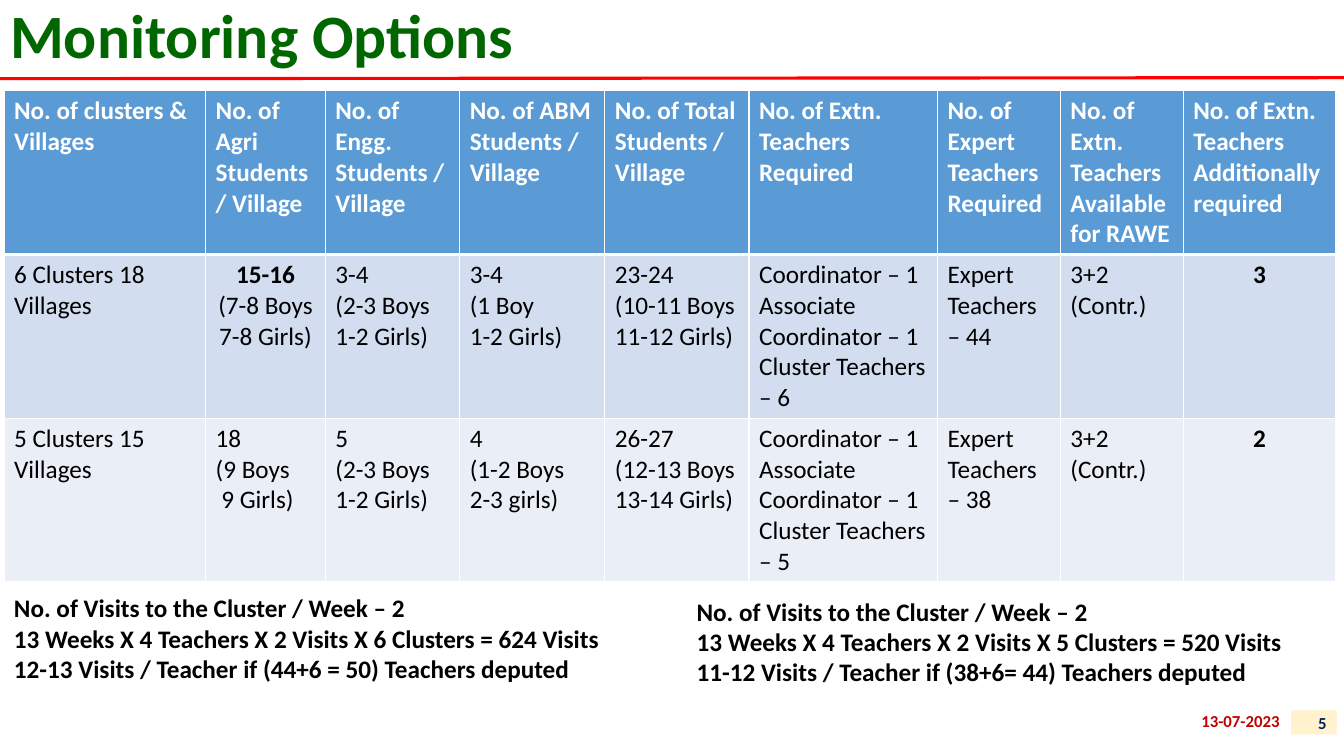
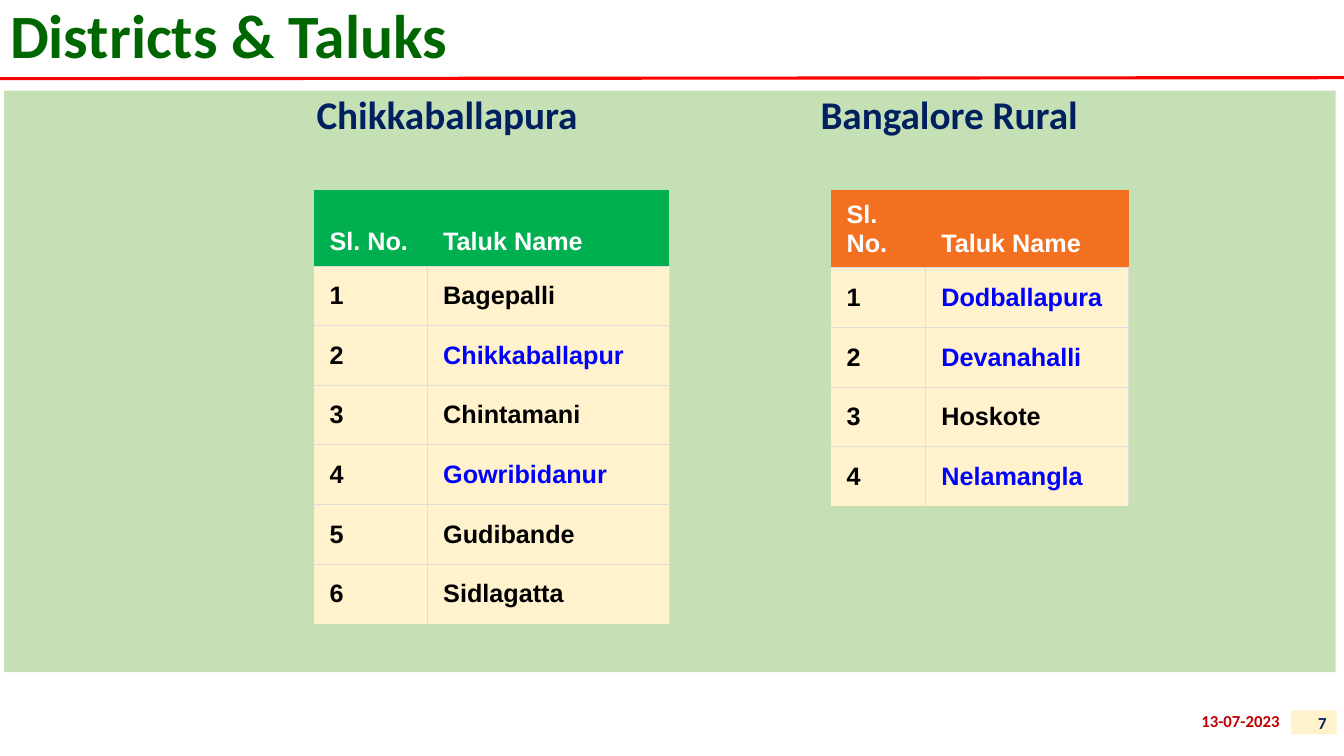
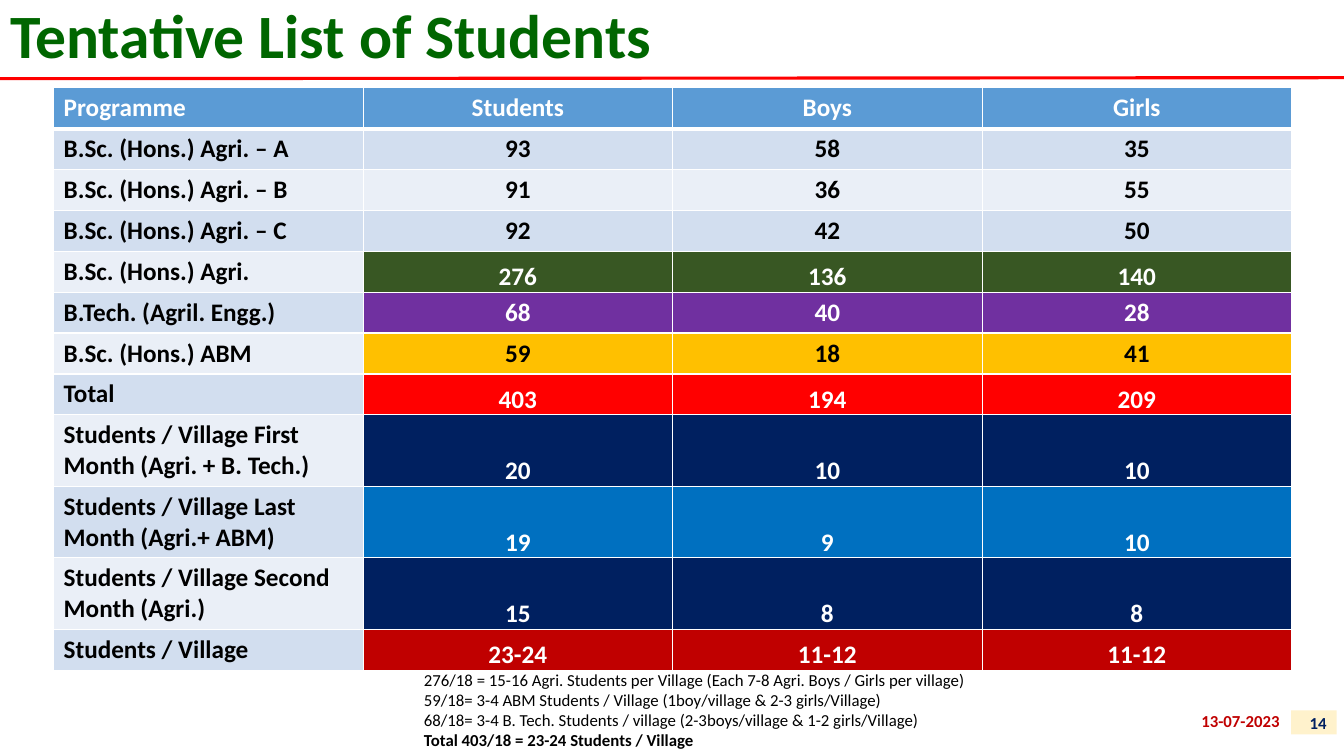
from dataclasses import dataclass, replace
from typing import NamedTuple, Optional, Sequence

from lxml import etree
from pptx import Presentation
from pptx import oxml
from pptx import util as u
from pptx.dml import color
from pptx.enum import shapes, text
from pptx.oxml import ns

Pt = u.Pt
NO_GRID_STYLE = "{2D5ABB26-0587-4C30-8999-92F81FD0307C}"
TAB_STEP = str(Pt(72))
WHITE, BLACK, NAVY, CREAM = "FFFFFF", "000000", "002060", "FFF2CC"
HEADING, BANDS = "5B9BD5", ("D2DEEF", "EAEFF7")
LEFT, CENTER, RIGHT = text.PP_ALIGN.LEFT, text.PP_ALIGN.CENTER, text.PP_ALIGN.RIGHT
TOP, MIDDLE, BOTTOM = (
    text.MSO_ANCHOR.TOP, text.MSO_ANCHOR.MIDDLE, text.MSO_ANCHOR.BOTTOM)


class Box(NamedTuple):
    left: float
    top: float
    width: float
    height: float


class Margins(NamedTuple):
    left: float = 7.2
    top: float = 3.6
    right: float = 7.2
    bottom: float = 3.6


@dataclass(frozen=True)
class Ink:
    size: float = 18
    color: str = BLACK
    bold: bool = True
    font: str = "Calibri"
    align: text.PP_ALIGN = LEFT


class Line(NamedTuple):
    words: str
    ink: Ink


@dataclass(frozen=True)
class Cell:
    lines: Sequence[Line]
    fill: str
    anchor: text.MSO_ANCHOR = TOP
    margins: Margins = Margins()


class Border(NamedTuple):
    side: str
    width: float
    color: str


class Programme(NamedTuple):
    name: str
    counts: tuple[str, str, str]
    fill: Optional[str] = None
    color: str = BLACK
    low: bool = False


class District(NamedTuple):
    left: float
    columns: tuple[float, float]
    header_height: float
    header_fill: str
    taluks: Sequence[str]
    chosen: Sequence[str]


TITLE_INK = Ink(44, "006600")
BOLD = Ink()
PLAIN = Ink(bold=False)
HEADING_INK = Ink(color=WHITE)
DATE_INK = Ink(12, "C00000")
NUMBER_INK = Ink(12, NAVY, align=RIGHT)
DISTRICT_INK = Ink(28, NAVY)
TALUK_INK = Ink(font="Arial")
NOTE_INK = Ink(12, bold=False)
HEADER_MARGINS = Margins(11.25, 4.7, 11.25, 7.5)
TALUK_MARGINS = Margins(11.25, 11.25, 11.25, 9.6)
TIGHT_MARGINS = Margins(0.72, 0.72, 0.72, 0)

CLUSTER_COLUMNS = (144, 85.5, 96, 103.7, 103, 134.6, 87.8, 87.8, 109)
CLUSTER_HEADINGS = (
    "No. of clusters & Villages", "No. of Agri Students / Village",
    "No. of Engg. Students / Village", "No. of ABM Students / Village",
    "No. of Total Students / Village", "No. of Extn. Teachers Required",
    "No. of Expert Teachers Required", "No. of Extn. Teachers Available for RAWE",
    "No. of Extn. Teachers Additionally required")
CLUSTER_OPTIONS = (
    ("6 Clusters 18 Villages", "15-16\n(7-8 Boys\n7-8 Girls)",
     "3-4\n(2-3 Boys\n1-2 Girls)", "3-4\n(1 Boy\n1-2 Girls)",
     "23-24\n(10-11 Boys\n11-12 Girls)",
     "Coordinator – 1\nAssociate Coordinator – 1\nCluster Teachers – 6",
     "Expert Teachers – 44", "3+2 (Contr.)", "3"),
    ("5 Clusters 15 Villages", "18\n(9 Boys\n 9 Girls)",
     "5\n(2-3 Boys\n1-2 Girls)", "4\n(1-2 Boys\n2-3 girls)",
     "26-27\n(12-13 Boys\n13-14 Girls)",
     "Coordinator – 1\nAssociate Coordinator – 1\nCluster Teachers – 5",
     "Expert Teachers – 38", "3+2 (Contr.)", "2"),
)
VISITS = (
    (Box(2.9, 419.8, 464, 72.7),
     "No. of Visits to the Cluster / Week – 2\n"
     "13 Weeks X 4 Teachers X 2 Visits X 6 Clusters = 624 Visits\n"
     "12-13 Visits / Teacher if (44+6 = 50) Teachers deputed"),
    (Box(490.5, 422.2, 464, 72.7),
     "No. of Visits to the Cluster / Week – 2\n"
     "13 Weeks X 4 Teachers X 2 Visits X 5 Clusters = 520 Visits\n"
     "11-12 Visits / Teacher if (38+6= 44) Teachers deputed"),
)
DISTRICTS = (
    District(593.5, (67.7, 145), 55.2, "F37020",
             ("Dodballapura", "Devanahalli", "Hoskote", "Nelamangla"),
             ("Dodballapura", "Devanahalli", "Nelamangla")),
    District(224.2, (81.2, 172.8), 54, "00B050",
             ("Bagepalli", "Chikkaballapur", "Chintamani", "Gowribidanur",
              "Gudibande", "Sidlagatta"),
             ("Chikkaballapur", "Gowribidanur")),
)
PROGRAMMES = (
    Programme("B.Sc. (Hons.) Agri. – A", ("93", "58", "35")),
    Programme("B.Sc. (Hons.) Agri. – B", ("91", "36", "55")),
    Programme("B.Sc. (Hons.) Agri. – C", ("92", "42", "50")),
    Programme("B.Sc. (Hons.) Agri.", ("276", "136", "140"), "385723", WHITE, True),
    Programme("B.Tech. (Agril. Engg.)", ("68", "40", "28"), "7030A0", WHITE),
    Programme("B.Sc. (Hons.) ABM", ("59", "18", "41"), "FFC000"),
    Programme("Total", ("403", "194", "209"), "FF0000", WHITE, True),
    Programme("Students / Village First Month (Agri. + B. Tech.)",
              ("20", "10", "10"), NAVY, WHITE, True),
    Programme("Students / Village Last Month (Agri.+ ABM)",
              ("19", "9", "10"), "0070C0", WHITE, True),
    Programme("Students / Village Second Month (Agri.)",
              ("15", "8", "8"), NAVY, WHITE, True),
    Programme("Students / Village", ("23-24", "11-12", "11-12"),
              "C00000", WHITE, True),
)
VILLAGE_SHARES = (
    "276/18 = 15-16 Agri. Students per Village (Each 7-8 Agri. Boys / Girls per village)\n"
    "59/18= 3-4 ABM Students / Village (1boy/village & 2-3 girls/Village)\n"
    "68/18= 3-4 B. Tech. Students / village (2-3boys/village & 1-2 girls/Village)")


def paint(target, hex_color: str) -> None:
    if hasattr(target, "solid"):
        target.solid()
        target = target.fore_color
    target.rgb = color.RGBColor.from_string(hex_color)


def lines_of(words: str, ink: Ink) -> list[Line]:
    return [Line(part, ink) for part in words.split("\n")]


def write(frame, lines: Sequence[Line]) -> None:
    for index, (words, ink) in enumerate(lines):
        paragraph = frame.add_paragraph() if index else frame.paragraphs[0]
        paragraph.alignment = ink.align
        run = paragraph.add_run()
        run.text = words
        run.font.name = ink.font
        run.font.size = Pt(ink.size)
        run.font.bold = ink.bold
        paint(run.font.color, ink.color)


def place(shape, box: Box) -> None:
    shape.left, shape.top, shape.width, shape.height = map(Pt, box)


def add_words(slide, box: Box, lines: Sequence[Line], anchor=TOP, wrap=True) -> None:
    frame = slide.shapes.add_textbox(*map(Pt, box)).text_frame
    frame.word_wrap = wrap
    frame.vertical_anchor = anchor
    write(frame, lines)


def fill_placeholder(placeholder, box: Box, words: str, ink: Ink, anchor) -> None:
    place(placeholder, box)
    frame = placeholder.text_frame
    frame.auto_size = text.MSO_AUTO_SIZE.NONE
    frame.vertical_anchor = anchor
    write(frame, [Line(words, ink)])
    frame.paragraphs[0].line_spacing = 0.9
    frame.paragraphs[0].space_before = Pt(0)


def add_base(deck, layout: int, title: str, number: str):
    slide = deck.slides.add_slide(deck.slide_layouts[layout])
    rule = slide.shapes.add_connector(
        shapes.MSO_CONNECTOR.STRAIGHT, Pt(0), Pt(56.2), Pt(960), Pt(55.5))
    rule.line.width = Pt(2.25)
    paint(rule.line.fill, "FF0000")
    etree.SubElement(rule._element.spPr, ns.qn("a:effectLst"))
    fill_placeholder(slide.shapes.title, Box(0, 0, 960, 55.4), title, TITLE_INK, MIDDLE)
    add_words(slide, Box(851, 500.4, 71.3, 28.8), [Line("13-07-2023", DATE_INK)],
              MIDDLE, wrap=False)
    badge = slide.shapes.add_shape(
        shapes.MSO_SHAPE.RECTANGLE, *map(Pt, Box(922.3, 507.4, 32.4, 17.3)))
    badge.shadow.inherit = False
    badge.line.fill.background()
    paint(badge.fill, CREAM)
    badge.text_frame.vertical_anchor = MIDDLE
    write(badge.text_frame, [Line(number, NUMBER_INK)])
    return slide


def draw_borders(cell, borders: Sequence[Border]) -> None:
    properties = cell._tc.get_or_add_tcPr()
    for index, (side, width, hex_color) in enumerate(borders):
        properties.insert(index, oxml.parse_xml(
            f'<a:ln{side} {ns.nsdecls("a")} w="{Pt(width)}"><a:solidFill>'
            f'<a:srgbClr val="{hex_color}"/></a:solidFill></a:ln{side}>'))


def white_grid(row: int, column: int) -> list[Border]:
    heavy = {(0, "B"), (1, "T")}
    return [Border(side, 3 if (row, side) in heavy else 1, WHITE) for side in "LRTB"]


def grey_grid(row: int, column: int) -> list[Border]:
    sides = "B" if row == 0 else "LRT" if column else "RT"
    return [Border(side, 0.75, "DDDDDD") for side in sides]


def add_grid(slide, left: float, top: float, widths: Sequence[float],
             heights: Sequence[float], rows: Sequence[Sequence[Cell]], borders) -> None:
    box = Box(left, top, sum(widths), sum(heights))
    table = slide.shapes.add_table(len(rows), len(widths), *map(Pt, box)).table
    table.first_row = table.horz_banding = False
    table._tbl.tblPr.find(ns.qn("a:tableStyleId")).text = NO_GRID_STYLE
    for column, width in zip(table.columns, widths):
        column.width = Pt(width)
    for r, (height, row) in enumerate(zip(heights, rows)):
        table.rows[r].height = Pt(height)
        for c, content in enumerate(row):
            cell = table.cell(r, c)
            margins = map(Pt, content.margins)
            cell.margin_left, cell.margin_top, cell.margin_right, cell.margin_bottom = margins
            cell.vertical_anchor = content.anchor
            paint(cell.fill, content.fill)
            draw_borders(cell, borders(r, c))
            write(cell.text_frame, content.lines)


def cluster_lines(words: str, column: int) -> list[Line]:
    if column == len(CLUSTER_COLUMNS) - 1:
        return lines_of(words, replace(BOLD, align=CENTER))
    if words.startswith("15-16"):
        first, *others = lines_of(words, replace(PLAIN, align=CENTER))
        return [Line(first.words, replace(first.ink, bold=True)), *others]
    return lines_of(words, PLAIN)


def add_monitoring(deck) -> None:
    slide = add_base(deck, 5, "Monitoring Options", "5")
    rows = [[Cell([Line(words, HEADING_INK)], HEADING) for words in CLUSTER_HEADINGS]]
    for option, band in zip(CLUSTER_OPTIONS, BANDS):
        rows.append([Cell(cluster_lines(words, c), band) for c, words in enumerate(option)])
    add_grid(slide, 2.9, 64.8, CLUSTER_COLUMNS, [117] * len(rows), rows, white_grid)
    for box, words in VISITS:
        add_words(slide, box, lines_of(words, BOLD))


def add_districts(deck) -> None:
    slide = add_base(deck, 1, "Districts & Taluks", "7")
    panel = slide.placeholders[1]
    paint(panel.fill, "C5E0B4")
    properties = panel.text_frame.paragraphs[0]._p.get_or_add_pPr()
    for setting, length in (("marL", "0"), ("indent", "0"), ("defTabSz", TAB_STEP)):
        properties.set(setting, length)
    etree.SubElement(properties, ns.qn("a:buNone"))
    fill_placeholder(panel, Box(2.9, 64.8, 951.1, 415.4),
                     "\t\t\tChikkaballapura\t\t\tBangalore Rural", DISTRICT_INK, TOP)
    header_ink = replace(TALUK_INK, color=WHITE)
    for district in DISTRICTS:
        rows = [[Cell([Line(words, header_ink)], district.header_fill, BOTTOM, HEADER_MARGINS)
                 for words in ("Sl. No.", "Taluk Name")]]
        for serial, taluk in enumerate(district.taluks, 1):
            shade = "0000FF" if taluk in district.chosen else BLACK
            entry = (Line(str(serial), TALUK_INK),
                     Line(taluk, replace(TALUK_INK, color=shade)))
            rows.append([Cell([line], CREAM, margins=TALUK_MARGINS) for line in entry])
        heights = [district.header_height] + [42.6] * len(district.taluks)
        add_grid(slide, district.left, 136, district.columns, heights, rows, grey_grid)


def add_students(deck) -> None:
    slide = add_base(deck, 5, "Tentative List of Students", "14")
    headings = ("Programme", "Students", "Boys", "Girls")
    rows = [[Cell([Line(words, replace(HEADING_INK, align=CENTER if c else LEFT))], HEADING)
             for c, words in enumerate(headings)]]
    heights = [29.2]
    for index, programme in enumerate(PROGRAMMES):
        band = BANDS[index % 2]
        ink = Ink(color=programme.color, align=CENTER)
        anchor, margins = (BOTTOM, TIGHT_MARGINS) if programme.low else (TOP, Margins())
        rows.append([Cell([Line(programme.name, BOLD)], band)] + [
            Cell([Line(count, ink)], programme.fill or band, anchor, margins)
            for count in programme.counts])
        heights.append(51.1 if "Month" in programme.name else 29.2)
    add_grid(slide, 38.3, 62.7, [221.1] * 4, heights, rows, white_grid)
    total = Line("Total 403/18 = 23-24 Students / Village", replace(NOTE_INK, bold=True))
    add_words(slide, Box(295.8, 474.6, 522.7, 65.4),
              [*lines_of(VILLAGE_SHARES, NOTE_INK), total])


def widen_tabs(deck) -> None:
    for level in deck.slide_master.element.iter():
        if level.get("defTabSz"):
            level.set("defTabSz", TAB_STEP)


def main() -> None:
    deck = Presentation()
    deck.slide_width, deck.slide_height = Pt(960), Pt(540)
    widen_tabs(deck)
    add_monitoring(deck)
    add_districts(deck)
    add_students(deck)
    deck.save("out.pptx")


if __name__ == "__main__":
    main()
